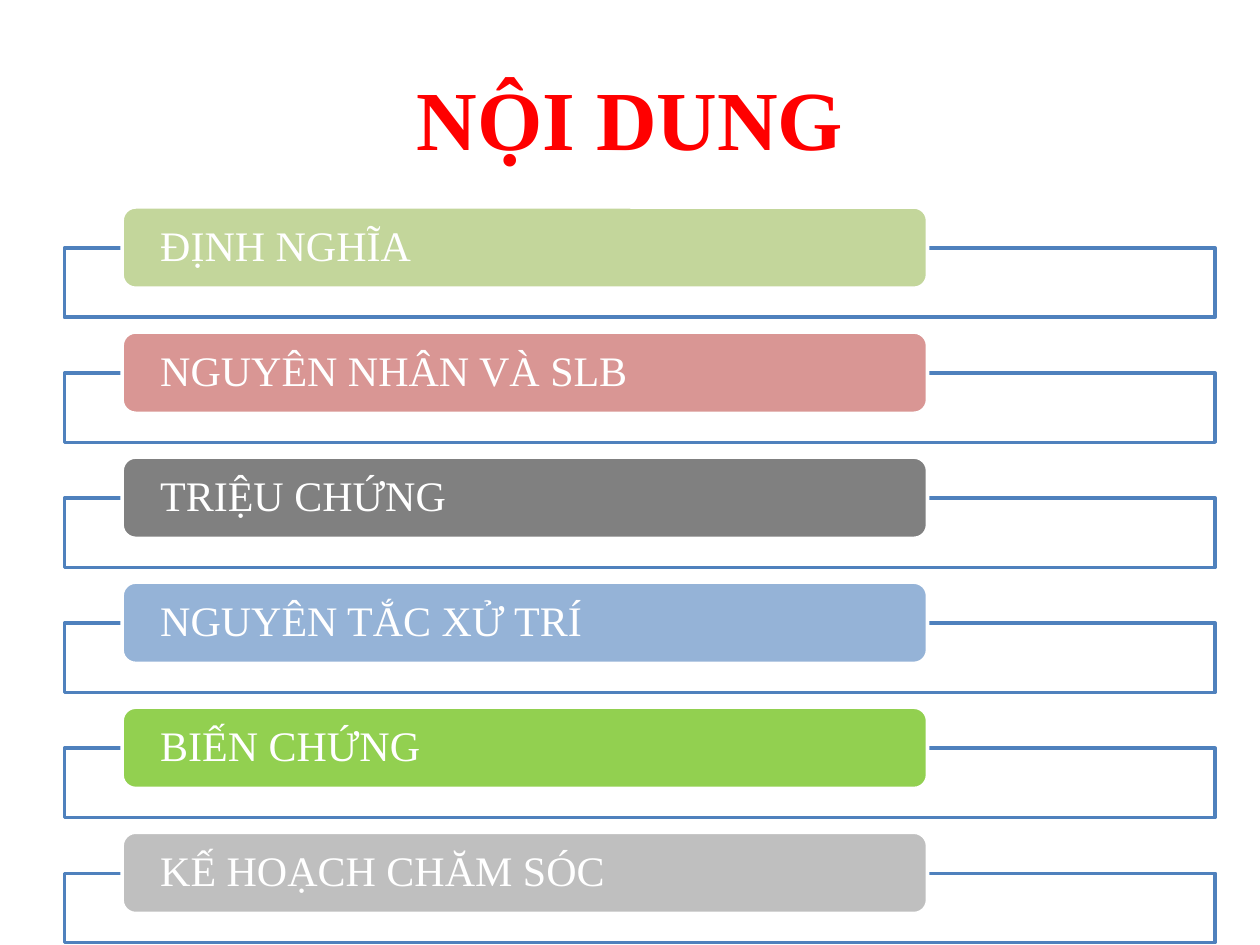
from pptx import Presentation
from pptx.dml.color import RGBColor
from pptx.enum.shapes import MSO_SHAPE
from pptx.enum.text import MSO_ANCHOR, PP_ALIGN
from pptx.util import Pt

FONT = "Times New Roman"
WHITE, BLUE, RED = "FFFFFF", "4F81BD", "FF0000"

TOPICS = [
    ("ĐỊNH NGHĨA", "C3D69B"),
    ("NGUYÊN NHÂN VÀ SLB", "D99694"),
    ("TRIỆU CHỨNG", "808080"),
    ("NGUYÊN TẮC XỬ TRÍ", "95B3D7"),
    ("BIẾN CHỨNG", "92D050"),
    ("KẾ HOẠCH CHĂM SÓC", "BFBFBF"),
]
FIRST_TOP, PITCH = 118.3, 71.46
FRAME_DROP = 23.4  # each frame starts at the middle of its label


def color(hex_string):
    return RGBColor.from_string(hex_string)


def write(frame, text, size, fill, bold=False, align=PP_ALIGN.LEFT, spacing=None):
    frame.word_wrap = True
    frame.vertical_anchor = MSO_ANCHOR.MIDDLE
    paragraph = frame.paragraphs[0]
    paragraph.alignment = align
    paragraph.line_spacing = spacing
    run = paragraph.add_run()
    run.text = text
    run.font.name = FONT
    run.font.size = Pt(size)
    run.font.bold = bold
    run.font.color.rgb = color(fill)


class ContentsSlide:
    def __init__(self, deck):
        self.slide = deck.slides.add_slide(deck.slide_layouts[5])

    def title(self, text):
        heading = self.slide.shapes.title
        heading.left, heading.top = Pt(36), Pt(21.6)
        heading.width, heading.height = Pt(648), Pt(90)
        write(heading.text_frame, text, 48, RED, bold=True, align=PP_ALIGN.CENTER)

    def box(self, kind, left, top, width, height, fill, line):
        box = self.slide.shapes.add_shape(kind, Pt(left), Pt(top), Pt(width), Pt(height))
        box.shadow.inherit = False
        box.fill.solid()
        box.fill.fore_color.rgb = color(fill)
        box.line.color.rgb = color(line)
        box.line.width = Pt(2)
        return box

    def topic(self, text, top, fill):
        # Outlined frame behind, coloured label in front
        self.box(MSO_SHAPE.RECTANGLE, 36.8, top + FRAME_DROP, 657.6, 39.6, WHITE, BLUE)
        label = self.box(MSO_SHAPE.ROUNDED_RECTANGLE, 69.8, top, 460.2, 46.4, fill, WHITE)
        frame = label.text_frame
        frame.margin_left = frame.margin_right = Pt(19.5)
        frame.margin_top = frame.margin_bottom = Pt(0)
        write(frame, text, 24, WHITE, spacing=0.9)


def main():
    deck = Presentation()
    deck.slide_width, deck.slide_height = Pt(720), Pt(540)
    contents = ContentsSlide(deck)

    # Heading
    contents.title("NỘI DUNG")

    # Topics, evenly stacked
    for row, (topic, fill) in enumerate(TOPICS):
        contents.topic(topic, FIRST_TOP + row * PITCH, fill)

    deck.save("out.pptx")


if __name__ == "__main__":
    main()
